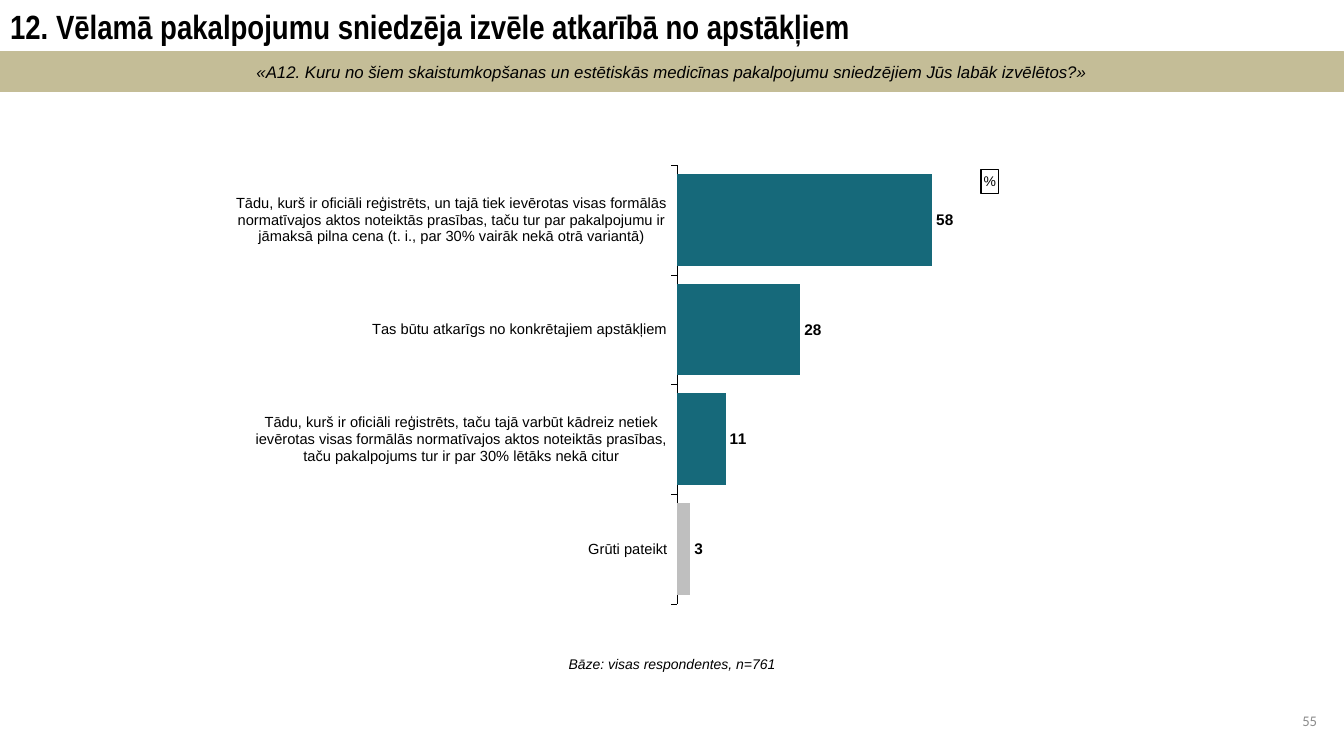
import dataclasses

import pptx
import pptx.chart.data
import pptx.dml.color
import pptx.enum.chart
import pptx.enum.shapes
import pptx.enum.text
import pptx.oxml
import pptx.oxml.ns
import pptx.util

EMU_PER_PX = 914400 / 100.8
ALIGN = pptx.enum.text.PP_ALIGN
ANCHOR = pptx.enum.text.MSO_ANCHOR

ANSWERS = {
    "Tādu, kurš ir oficiāli reģistrēts, un tajā tiek ievērotas visas formālās "
    "normatīvajos aktos noteiktās prasības, taču tur par pakalpojumu ir "
    "jāmaksā pilna cena (t. i., par 30% vairāk nekā otrā variantā)": 58,
    "Tas būtu atkarīgs no konkrētajiem apstākļiem": 28,
    "Tādu, kurš ir oficiāli reģistrēts, taču tajā varbūt kādreiz netiek "
    "ievērotas visas formālās normatīvajos aktos noteiktās prasības, "
    "taču pakalpojums tur ir par 30% lētāks nekā citur": 11,
    "Grūti pateikt": 3,
}


@dataclasses.dataclass(frozen=True)
class Theme:
    text: str = "000000"
    band: str = "C4BD97"
    bar: str = "16697A"
    undecided: str = "BFBFBF"
    page: str = "8C8C8C"
    font: str = "Arial"
    title_font: str = "Arial Narrow"
    page_font: str = "Calibri"
    title_size: float = 24
    question_size: float = 12
    label_size: float = 11
    axis_size: float = 10.5
    note_size: float = 10
    chart_size: float = 9


def px(*lengths):
    return [pptx.util.Emu(round(length * EMU_PER_PX)) for length in lengths]


def rgb(value):
    return pptx.dml.color.RGBColor.from_string(value)


def set_all(target, values):
    for name, value in values.items():
        setattr(target, name, value)


def place(element, index, mode, **fractions):
    """Give a chart part a manual layout, in fractions of the chart."""
    for old in element.findall(pptx.oxml.ns.qn("c:layout")):
        element.remove(old)
    target = '<c:layoutTarget val="inner"/>' if mode == "inner" else ""
    modes = '<c:xMode val="edge"/><c:yMode val="edge"/>'
    values = "".join(f'<c:{name} val="{value}"/>' for name, value in fractions.items())
    element.insert(index, pptx.oxml.parse_xml(
        f'<c:layout {pptx.oxml.ns.nsdecls("c")}><c:manualLayout>'
        f"{target}{modes}{values}</c:manualLayout></c:layout>"))


class SlideBuilder:
    def __init__(self, presentation, theme):
        self.theme = theme
        self.slide = presentation.slides.add_slide(presentation.slide_layouts[5])

    def style_font(self, font, size, color=None, name=None, **flags):
        set_all(font, {"size": pptx.util.Pt(size), "name": name or self.theme.font, **flags})
        font.color.rgb = rgb(color or self.theme.text)

    def fill_text(self, shape, text, size, align=ALIGN.CENTER, anchor=ANCHOR.MIDDLE, **font):
        frame = shape.text_frame
        frame.text = text
        set_all(frame, {"word_wrap": True, "vertical_anchor": anchor,
                        "auto_size": pptx.enum.text.MSO_AUTO_SIZE.NONE})
        paragraph = frame.paragraphs[0]
        paragraph.alignment = align
        self.style_font(paragraph.runs[0].font, size, **font)

    def title(self, box, text):
        shape = self.slide.shapes.title
        set_all(shape, dict(zip(("left", "top", "width", "height"), px(*box))))
        self.fill_text(shape, text, self.theme.title_size, ALIGN.LEFT,
                       name=self.theme.title_font, bold=True)

    def band(self, box, text):
        shape = self.slide.shapes.add_shape(
            pptx.enum.shapes.MSO_SHAPE.RECTANGLE, *px(*box))
        shape.shadow.inherit = False
        shape.fill.solid()
        shape.fill.fore_color.rgb = shape.line.color.rgb = rgb(self.theme.band)
        shape.line.width = pptx.util.Pt(0.75)
        self.fill_text(shape, text, self.theme.question_size, italic=True)

    def text(self, box, text, size, **style):
        self.fill_text(self.slide.shapes.add_textbox(*px(*box)), text, size, **style)

    def bar_chart(self, box, answers, unit, maximum):
        data = pptx.chart.data.CategoryChartData(number_format="0")
        data.categories = list(answers)
        data.add_series("Series 1", list(answers.values()))
        kind = pptx.enum.chart.XL_CHART_TYPE.BAR_CLUSTERED
        chart = self.slide.shapes.add_chart(kind, *px(*box), data).chart
        chart.has_legend = False
        self.style_font(chart.font, self.theme.chart_size)
        self.style_axes(chart, maximum)
        self.style_bars(chart.plots[0])
        self.unit_box(chart, unit)
        plot_area = chart.element.find(".//" + pptx.oxml.ns.qn("c:plotArea"))
        place(plot_area, 0, "inner", x=0.55, y=0.02, w=0.44, h=0.96)

    def style_axes(self, chart, maximum):
        marks = pptx.enum.chart.XL_TICK_MARK
        set_all(chart.category_axis, {"reverse_order": True, "major_tick_mark": marks.OUTSIDE,
                                      "has_major_gridlines": False})
        self.style_font(chart.category_axis.tick_labels.font, self.theme.axis_size)
        line = chart.category_axis.format.line
        line.color.rgb = rgb(self.theme.text)
        line.width = pptx.util.Pt(0.25)
        set_all(chart.value_axis, {"minimum_scale": 0, "maximum_scale": maximum,
                                   "has_major_gridlines": False, "visible": False})

    def style_bars(self, plot):
        set_all(plot, {"gap_width": 20, "vary_by_categories": False})
        series = plot.series[0]
        last = len(series.values) - 1
        for bar, color in ((series, self.theme.bar),
                           (series.points[last], self.theme.undecided)):
            bar.format.fill.solid()
            bar.format.fill.fore_color.rgb = rgb(color)
        labels = series.data_labels
        set_all(labels, {"show_value": True, "number_format": "0",
                         "number_format_is_linked": False,
                         "position": pptx.enum.chart.XL_LABEL_POSITION.OUTSIDE_END})
        self.style_font(labels.font, self.theme.label_size, bold=True)

    def unit_box(self, chart, unit):
        title = chart.chart_title
        title.text_frame.text = unit
        self.style_font(title.text_frame.paragraphs[0].runs[0].font,
                        self.theme.note_size, bold=False)
        title.format.line.color.rgb = rgb(self.theme.text)
        title.format.line.width = pptx.util.Pt(0.75)
        place(title.element, 1, "edge", x=0.93, y=0.03)


def main():
    presentation = pptx.Presentation()
    presentation.slide_width, presentation.slide_height = px(1344, 756)
    theme = Theme()
    builder = SlideBuilder(presentation, theme)
    builder.title((0, 0, 1344, 52),
                  "12. Vēlamā pakalpojumu sniedzēja izvēle atkarībā no apstākļiem")
    builder.band((0, 52, 1344, 40),
                 "«A12. Kuru no šiem skaistumkopšanas un estētiskās medicīnas "
                 "pakalpojumu sniedzējiem Jūs labāk izvēlētos?»")
    builder.text((168, 640, 1008, 48), "Bāze: visas respondentes, n=761",
                 theme.note_size, italic=True)
    builder.bar_chart((236, 156, 801, 457), ANSWERS, "%", 80)
    builder.text((1184, 707, 143, 40), "55", theme.axis_size, align=ALIGN.RIGHT,
                 anchor=ANCHOR.TOP, name=theme.page_font, color=theme.page)
    presentation.save("out.pptx")


if __name__ == "__main__":
    main()
